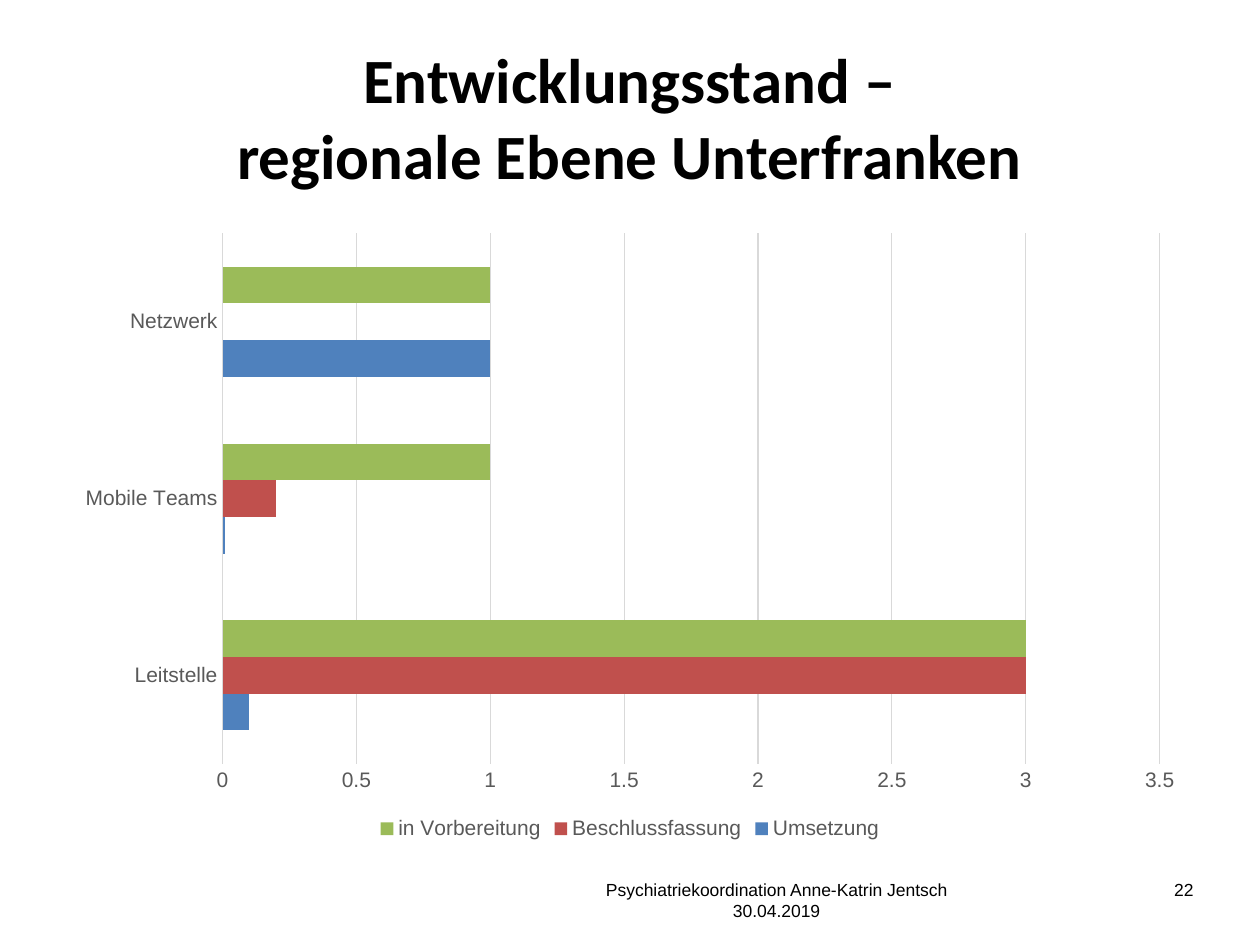
from pptx import Presentation
from pptx.chart.data import CategoryChartData
from pptx.dml.color import RGBColor
from pptx.enum.chart import XL_CHART_TYPE as ChartType
from pptx.enum.chart import XL_LEGEND_POSITION as LegendPosition
from pptx.enum.chart import XL_TICK_MARK as TickMark
from pptx.enum.text import MSO_ANCHOR as Anchor
from pptx.enum.text import PP_ALIGN as Align
from pptx.util import Pt

EMU_PER_PX = 914400 / 126


def px(length):
    return round(length * EMU_PER_PX)


def color(hex_string):
    return RGBColor.from_string(hex_string)


class SlideBuilder:
    heading_font = "Calibri"
    body_font = "Arial"
    black = "000000"
    gray = "595959"
    light_gray = "D9D9D9"

    def __init__(self, slide):
        self.slide = slide

    def style_font(self, font, size, hex_string, name=body_font, bold=False):
        font.name = name
        font.size = Pt(size)
        font.bold = bold
        font.color.rgb = color(hex_string)

    def title(self, text, left, top, width, height):
        shape = self.slide.shapes.title
        shape.left, shape.top = px(left), px(top)
        shape.width, shape.height = px(width), px(height)
        frame = shape.text_frame
        frame.text = text
        frame.vertical_anchor = Anchor.MIDDLE
        paragraph = frame.paragraphs[0]
        paragraph.alignment = Align.CENTER
        for run in paragraph.runs:
            self.style_font(run.font, 36, self.black, self.heading_font, True)

    def text(self, text, left, top, width, height, align):
        shape = self.slide.shapes.add_textbox(px(left), px(top), px(width), px(height))
        frame = shape.text_frame
        frame.word_wrap = True
        frame.text = text
        for paragraph in frame.paragraphs:
            paragraph.alignment = align
            for run in paragraph.runs:
                self.style_font(run.font, 10, self.black)
        return shape

    def bar_chart(self, categories, series, left, top, width, height):
        """Draw clustered bars; series maps each name to (values, fill colour)."""
        data = CategoryChartData()
        data.categories = categories
        for name, (values, _) in series.items():
            data.add_series(name, values)
        chart = self.slide.shapes.add_chart(
            ChartType.BAR_CLUSTERED, px(left), px(top), px(width), px(height), data
        ).chart
        chart.has_title = False
        self.style_font(chart.font, 10, self.black)

        plot = chart.plots[0]
        plot.gap_width = 182
        plot.vary_by_categories = False
        for bars, (_, fill) in zip(plot.series, series.values()):
            bars.format.fill.solid()
            bars.format.fill.fore_color.rgb = color(fill)
            bars.invert_if_negative = False

        category_axis, value_axis = chart.category_axis, chart.value_axis
        for axis in (category_axis, value_axis):
            axis.major_tick_mark = axis.minor_tick_mark = TickMark.NONE
            self.style_font(axis.tick_labels.font, 12, self.gray)
        value_axis.minimum_scale, value_axis.maximum_scale = 0, 3.5
        value_axis.major_unit = 0.5
        value_axis.format.line.fill.background()
        for line in (category_axis.format.line, value_axis.major_gridlines.format.line):
            line.color.rgb = color(self.light_gray)
            line.width = Pt(0.75)

        chart.has_legend = True
        chart.legend.position = LegendPosition.BOTTOM
        chart.legend.include_in_layout = False
        self.style_font(chart.legend.font, 12, self.gray)


def main():
    presentation = Presentation()
    presentation.slide_width, presentation.slide_height = px(1260), px(945)
    slide = presentation.slides.add_slide(presentation.slide_layouts[5])
    builder = SlideBuilder(slide)

    builder.title("Entwicklungsstand –\vregionale Ebene Unterfranken", 63, 38, 1133, 157)
    builder.bar_chart(
        ["Leitstelle", "Mobile Teams", "Netzwerk"],
        {
            "Umsetzung": ([0.1, 0.01, 1], "4F81BD"),
            "Beschlussfassung": ([3, 0.2, None], "C0504D"),
            "in Vorbereitung": ([3, 1, 1], "9BBB59"),
        },
        63, 221, 1134, 624,
    )
    footer = builder.text(
        "Psychiatriekoordination Anne-Katrin Jentsch\n30.04.2019",
        588, 873, 459, 50, Align.CENTER,
    )
    # A right indent sets the name left of the date's centre.
    name_line = footer.text_frame.paragraphs[0]
    name_line._p.get_or_add_pPr().set("marR", str(px(82)))
    builder.text("22", 1086, 873, 120, 50, Align.RIGHT)

    presentation.save("out.pptx")


if __name__ == "__main__":
    main()
